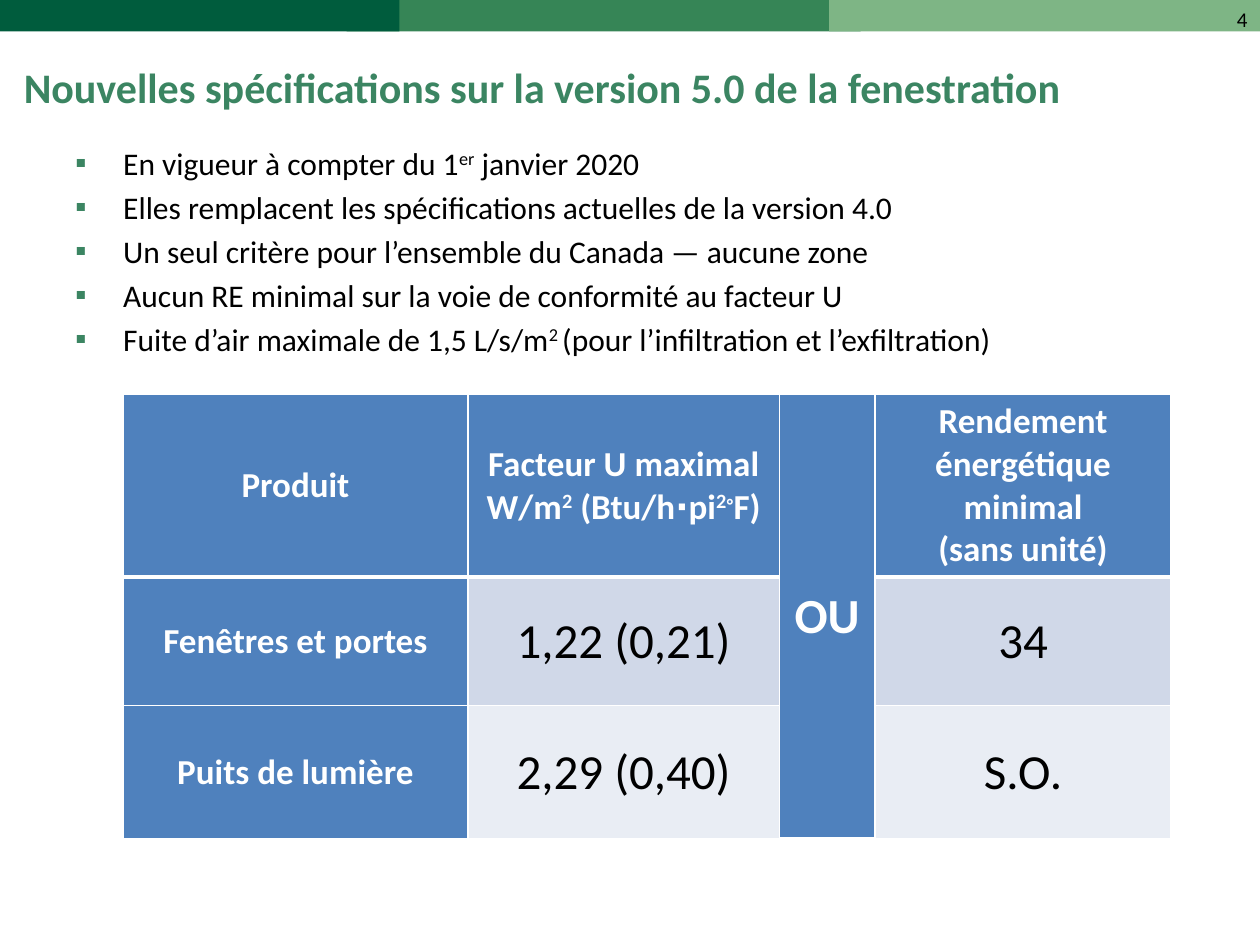
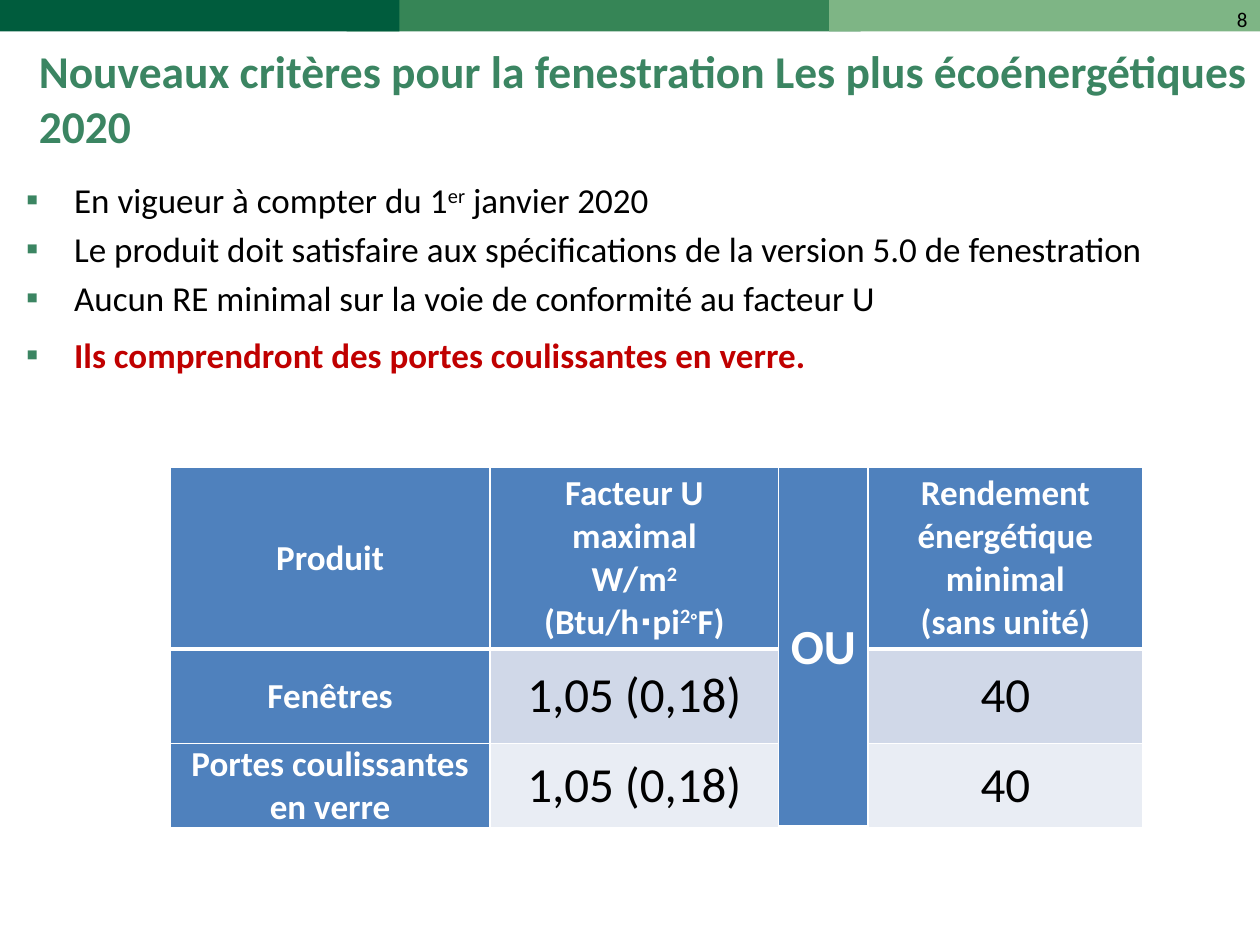
from dataclasses import dataclass

from lxml import etree
from pptx import Presentation
from pptx import util as u
from pptx.dml.color import RGBColor
from pptx.enum import shapes, text
from pptx.oxml.ns import qn

COLORS = {
    "dark_green": "005C3D", "mid_green": "368556", "light_green": "7EB585",
    "title": "3B8562", "text": "000000", "alert": "C00000", "white": "FFFFFF",
    "header": "4F81BD", "row_odd": "D0D8E8", "row_even": "E9EDF4",
}
FONT = "Calibri"
WIDTH, HEIGHT = u.Inches(10), u.Inches(7.5)
# The slide is a grid of 100 columns by 75 rows.
COL, ROW = WIDTH / 100, HEIGHT / 75
BULLET_INDENT = 3.8
CELL_MARGIN = 0.8
HAIRLINE, HEADER_RULE = 1, 3


@dataclass(frozen=True)
class Box:
    """Place on the grid, in columns and rows."""
    left: float
    top: float
    width: float
    height: float

    def emu(self) -> list[int]:
        return [round(self.left * COL), round(self.top * ROW),
                round(self.width * COL), round(self.height * ROW)]


@dataclass(frozen=True)
class Style:
    size: float
    color: str = "text"
    bold: bool = False


@dataclass(frozen=True)
class Band:
    box: Box
    color: str


@dataclass(frozen=True)
class Bullet:
    words: str
    color: str = "text"
    bold: bool = False
    space: float = 0.2  # space before, as a share of the text size


@dataclass(frozen=True)
class Criteria:
    """Table of criteria: each row is product, U-factor, energy rating."""
    left: float
    top: float
    cols: tuple[float, ...]
    rows: tuple[float, ...]
    products: tuple[tuple[str, str, str], ...]


@dataclass(frozen=True)
class Page:
    number: int
    title: str
    title_box: Box
    title_size: float
    bullets: tuple[Bullet, ...]
    bullet_box: Box
    bullet_size: float
    criteria: Criteria


BANDS = (
    Band(Box(27.5, 0, 40.8, 2.5), "mid_green"),
    Band(Box(0, 0, 31.7, 2.5), "dark_green"),
    Band(Box(65.8, 0, 34.2, 2.5), "light_green"),
)
NUMBER_BOX = Box(76.7, 0, 23.3, 5.2)
NUMBER = Style(12)
LABEL = Style(20, "white", True)
OR_LABEL = Style(28, "white", True)
VALUE = Style(28)
OR_COLUMN = 2
HEADINGS = ("Produit", "Facteur U maximal\nW/m|2| (Btu/h∙pi|2◦|F)", "OU",
            "Rendement énergétique minimal\n(sans unité)")

# Text between bars is superscript.
IN_FORCE = Bullet("En vigueur à compter du 1|er| janvier 2020")
NO_MINIMUM = Bullet("Aucun RE minimal sur la voie de conformité au facteur U")

PAGES = (
    Page(
        4, "Nouvelles spécifications sur la version 5.0 de la fenestration",
        Box(0.9, 3.9, 99.1, 5.9), 24,
        (IN_FORCE,
         Bullet("Elles remplacent les spécifications actuelles de la version 4.0"),
         Bullet("Un seul critère pour l’ensemble du Canada — aucune zone"),
         NO_MINIMUM,
         Bullet("Fuite d’air maximale de 1,5 L/s/m|2 |"
                "(pour l’infiltration et l’exfiltration)")),
        Box(5, 10.9, 90, 19), 18,
        Criteria(9.75, 31.3, (27.4, 24.7, 7.6, 23.5), (14.5, 10.2, 10.6),
                 (("Fenêtres et portes", "1,22 (0,21)", "34"),
                  ("Puits de lumière", "2,29 (0,40)", "S.O."))),
    ),
    Page(
        8, "Nouveaux critères pour la fenestration Les plus écoénergétiques 2020",
        Box(2.1, 4.1, 97.9, 7.3), 26,
        (IN_FORCE,
         Bullet("Le produit doit satisfaire aux spécifications "
                "de la version 5.0 de fenestration"),
         NO_MINIMUM,
         Bullet("Ils comprendront des portes coulissantes en verre.",
                "alert", True, 0.43)),
        Box(1.1, 13.7, 93.9, 18), 20,
        Criteria(13.5, 37.1, (25.4, 22.9, 7.1, 21.8), (14.4, 7.5, 6.6),
                 (("Fenêtres", "1,05 (0,18)", "40"),
                  ("Portes coulissantes en verre", "1,05 (0,18)", "40"))),
    ),
)


def rgb(name: str) -> RGBColor:
    return RGBColor.from_string(COLORS[name])


def write(p, words: str, style: Style) -> None:
    """Fill a paragraph; parts between bars become superscript."""
    for i, part in enumerate(words.split("|")):
        r = p.add_run()
        r.text = part
        r.font.name, r.font.size = FONT, u.Pt(style.size)
        r.font.bold, r.font.color.rgb = style.bold, rgb(style.color)
        if i % 2:
            r.font._element.set("baseline", "30000")


def add_text_frame(slide, box: Box):
    tf = slide.shapes.add_textbox(*box.emu()).text_frame
    tf.word_wrap = True
    return tf


def add_band(slide, band: Band) -> None:
    sp = slide.shapes.add_shape(shapes.MSO_SHAPE.RECTANGLE, *band.box.emu())
    sp.shadow.inherit = False
    sp.fill.solid()
    sp.fill.fore_color.rgb = rgb(band.color)
    sp.line.fill.background()


def add_frame(slide, page: Page) -> None:
    """Draw the top bands, the page number and the title."""
    for band in BANDS:
        add_band(slide, band)
    p = add_text_frame(slide, NUMBER_BOX).paragraphs[0]
    p.alignment = text.PP_ALIGN.RIGHT
    write(p, str(page.number), NUMBER)
    tf = add_text_frame(slide, page.title_box)
    tf.vertical_anchor = text.MSO_ANCHOR.MIDDLE
    tf.margin_right = 0
    write(tf.paragraphs[0], page.title, Style(page.title_size, "title", True))


def set_bullet(p) -> None:
    pPr = p._p.get_or_add_pPr()
    indent = round(BULLET_INDENT * COL)
    pPr.set("marL", str(indent))
    pPr.set("indent", str(-indent))
    color = etree.SubElement(pPr, qn("a:buClr"))
    etree.SubElement(color, qn("a:srgbClr"), val=COLORS["title"])
    etree.SubElement(pPr, qn("a:buFont"), typeface="Wingdings")
    pPr[-1].set("typeface", FONT)
    etree.SubElement(pPr, qn("a:buChar"), char="▪")


def add_bullets(slide, page: Page) -> None:
    tf = add_text_frame(slide, page.bullet_box)
    for i, bullet in enumerate(page.bullets):
        p = tf.add_paragraph() if i else tf.paragraphs[0]
        set_bullet(p)
        if i:
            p.space_before = u.Pt(page.bullet_size * bullet.space)
        write(p, bullet.words, Style(page.bullet_size, bullet.color, bullet.bold))


def set_borders(cell, row: int) -> None:
    """White lines all round, with a heavier rule under the header row."""
    top = HEADER_RULE if row == 1 else HAIRLINE
    bottom = HEADER_RULE if row == 0 else HAIRLINE
    tcPr = cell._tc.get_or_add_tcPr()
    for side, weight in zip("LRTB", (HAIRLINE, HAIRLINE, top, bottom)):
        ln = etree.SubElement(tcPr, qn(f"a:ln{side}"), w=str(u.Pt(weight)))
        fill = etree.SubElement(ln, qn("a:solidFill"))
        etree.SubElement(fill, qn("a:srgbClr"), val=COLORS["white"])


def fill_cell(cell, row: int, words: str, style: Style, color: str) -> None:
    set_borders(cell, row)
    cell.fill.solid()
    cell.fill.fore_color.rgb = rgb(color)
    cell.vertical_anchor = text.MSO_ANCHOR.MIDDLE
    cell.margin_left = cell.margin_right = round(CELL_MARGIN * COL)
    cell.margin_top = cell.margin_bottom = 0
    tf = cell.text_frame
    for i, line in enumerate(words.split("\n")):
        p = tf.add_paragraph() if i else tf.paragraphs[0]
        p.alignment = text.PP_ALIGN.CENTER
        write(p, line, style)


def add_criteria(slide, criteria: Criteria) -> None:
    box = Box(criteria.left, criteria.top, sum(criteria.cols), sum(criteria.rows))
    table = slide.shapes.add_table(
        len(criteria.rows), len(criteria.cols), *box.emu()).table
    for column, width in zip(table.columns, criteria.cols):
        column.width = round(width * COL)
    for row, height in zip(table.rows, criteria.rows):
        row.height = round(height * ROW)
    table.cell(0, OR_COLUMN).merge(table.cell(len(criteria.rows) - 1, OR_COLUMN))

    for c, heading in enumerate(HEADINGS):
        style = OR_LABEL if c == OR_COLUMN else LABEL
        fill_cell(table.cell(0, c), 0, heading, style, "header")
    for r, (product, u_factor, rating) in enumerate(criteria.products, start=1):
        shade = "row_odd" if r % 2 else "row_even"
        fill_cell(table.cell(r, 0), r, product, LABEL, "header")
        fill_cell(table.cell(r, 1), r, u_factor, VALUE, shade)
        fill_cell(table.cell(r, 3), r, rating, VALUE, shade)


def main() -> None:
    prs = Presentation()
    prs.slide_width, prs.slide_height = WIDTH, HEIGHT
    for page in PAGES:
        slide = prs.slides.add_slide(prs.slide_layouts[6])
        add_frame(slide, page)
        add_bullets(slide, page)
        add_criteria(slide, page.criteria)
    prs.save("out.pptx")


if __name__ == "__main__":
    main()
